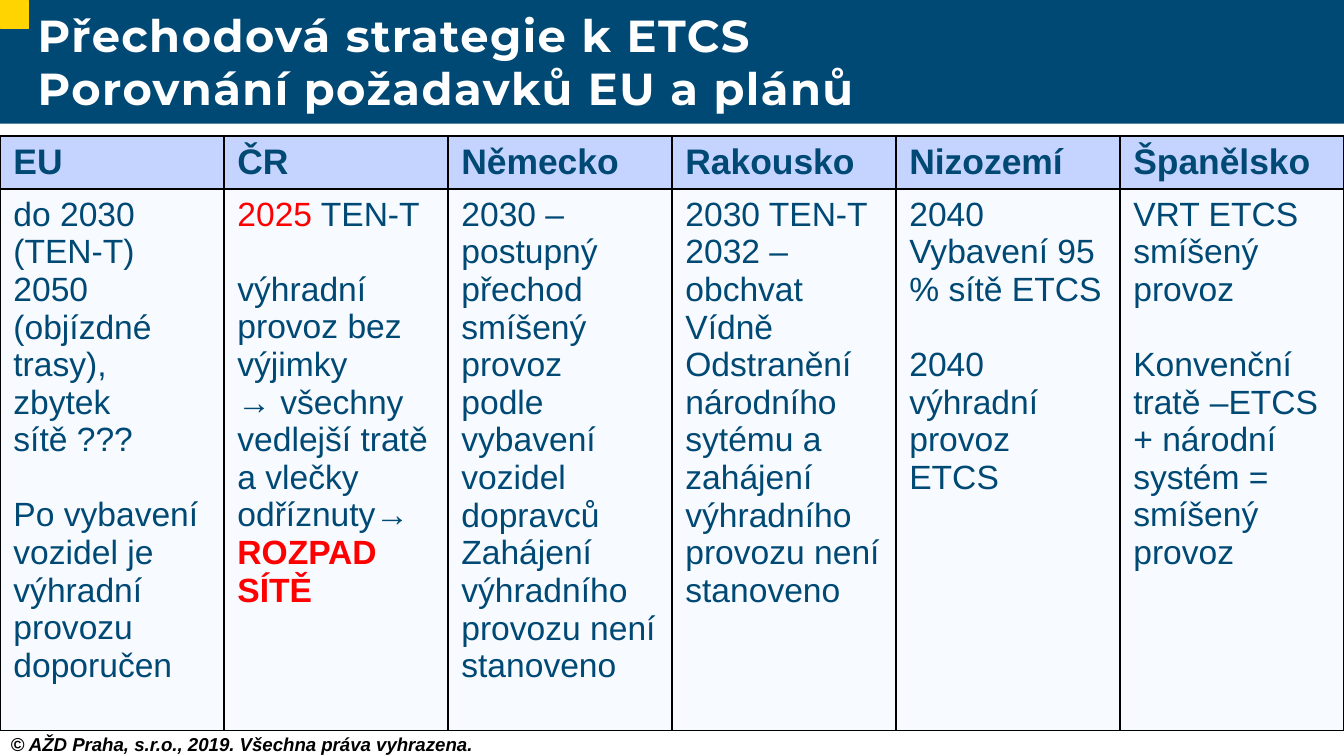
from lxml import etree
from pptx import Presentation
from pptx import util as u
from pptx.dml.color import RGBColor
from pptx.enum import shapes, text
from pptx.oxml.ns import qn

NAVY, YELLOW, RED, WHITE, BLACK = "004974", "FFD400", "FF0000", "FFFFFF", "000000"
HEADER_FILL, BODY_FILL = "C5D4FF", "DAE6FF"
WIDTH = 10
HEIGHT = WIDTH * 9 / 16
BODY_SIZE = 18
GAP = 20  # points, about one line of body text

# Content: a paragraph is (space before, runs); a run is (text, colour, bold)
TITLE = ["Přechodová strategie k ETCS", "Porovnání požadavků EU a plánů"]
COPYRIGHT = "© AŽD Praha, s.r.o., 2019. Všechna práva vyhrazena."


def plain(words, before=0):
    return before, [(words, NAVY, False)]


COUNTRIES = {
    "EU": [
        plain("do 2030 (TEN-T)"),
        plain("2050 (objízdné trasy), zbytek sítě ???"),
        plain("Po vybavení vozidel je výhradní provozu doporučen", GAP),
    ],
    "ČR": [
        (0, [("2025", RED, False), (" TEN-T", NAVY, False)]),
        plain("výhradní provoz bez výjimky\n→ všechny vedlejší tratě a vlečky odříznuty→", GAP),
        (0, [("ROZPAD SÍTĚ", RED, True)]),
    ],
    "Německo": [
        plain("2030 – postupný přechod smíšený provoz"),
        plain("podle vybavení vozidel dopravců"),
        plain("Zahájení výhradního provozu není stanoveno"),
    ],
    "Rakousko": [
        plain("2030 TEN-T"),
        plain("2032 – obchvat Vídně"),
        plain("Odstranění národního sytému a zahájení výhradního provozu není stanoveno"),
    ],
    "Nizozemí": [
        plain("2040"),
        plain("Vybavení 95 % sítě ETCS"),
        plain("2040 výhradní provoz ETCS", GAP),
    ],
    "Španělsko": [
        plain("VRT ETCS smíšený provoz"),
        plain("Konvenční tratě –ETCS + národní systém = smíšený provoz", GAP),
    ],
}


def color(value):
    return RGBColor.from_string(value)


def add_run(paragraph, words, size, hue, bold, face="Arial"):
    for i, line in enumerate(words.split("\n")):
        if i:
            paragraph.add_line_break()
        run = paragraph.add_run()
        run.text = line
        run.font.size, run.font.bold, run.font.name = u.Pt(size), bold, face
        run.font.color.rgb = color(hue)
    return run


def fill_frame(frame, paragraphs, size):
    for i, (before, runs) in enumerate(paragraphs):
        paragraph = frame.add_paragraph() if i else frame.paragraphs[0]
        paragraph.space_before = u.Pt(before)
        for words, hue, bold in runs:
            add_run(paragraph, words, size, hue, bold)


def set_margins(frame, *inches):
    (frame.margin_left, frame.margin_top,
     frame.margin_right, frame.margin_bottom) = map(u.Inches, inches)


def add_block(kind, width, height, hue):
    block = slide.shapes.add_shape(kind, 0, 0, u.Inches(width), u.Inches(height))
    block.shadow.inherit = False
    block.fill.solid()
    block.fill.fore_color.rgb = color(hue)
    block.line.fill.background()
    return block


def style_cell(cell, hue, opacity=None):
    props = cell._tc.get_or_add_tcPr()
    for side in ("a:lnL", "a:lnR", "a:lnT", "a:lnB"):
        border = etree.SubElement(props, qn(side), w=str(u.Pt(1)))
        solid = etree.SubElement(border, qn("a:solidFill"))
        etree.SubElement(solid, qn("a:srgbClr"), val=BLACK)
    cell.fill.solid()
    cell.fill.fore_color.rgb = color(hue)
    if opacity:
        tint = props.find(qn("a:solidFill")).find(qn("a:srgbClr"))
        etree.SubElement(tint, qn("a:alpha"), val=str(opacity * 1000))


deck = Presentation()
deck.slide_width, deck.slide_height = u.Inches(WIDTH), u.Inches(HEIGHT)
slide = deck.slides.add_slide(deck.slide_layouts[5])

# Title band with its corner mark
add_block(shapes.MSO_SHAPE.RECTANGLE, WIDTH, 0.92, NAVY)
corner = add_block(shapes.MSO_SHAPE.FLOWCHART_PROCESS, 0.21, 0.21, YELLOW)
corner.line.color.rgb = color(YELLOW)
corner.line.width = u.Pt(0.5)

# Title, brought in front of the band
title = slide.shapes.title
title.left, title.top, title.width, title.height = map(u.Inches, (0.28, 0.06, 8.5, 0.79))
slide.shapes._spTree.append(title._element)
frame = title.text_frame
frame.word_wrap = True
frame.auto_size = text.MSO_AUTO_SIZE.NONE
frame.vertical_anchor = text.MSO_ANCHOR.MIDDLE
set_margins(frame, 0, 0.04, 0.1, 0.04)
heading = frame.paragraphs[0]
heading.alignment = text.PP_ALIGN.LEFT
add_run(heading, "\n".join(TITLE), 24, WHITE, True, "Montserrat")
for run in heading.runs:
    run.font._element.set("spc", "80")

# Copyright line
footer = slide.shapes.add_textbox(0, u.Inches(5.41), u.Inches(7.67), u.Inches(0.21)).text_frame
footer.word_wrap = True
footer.vertical_anchor = text.MSO_ANCHOR.BOTTOM
set_margins(footer, 0.08, 0, 0.04, 0)
add_run(footer.paragraphs[0], COPYRIGHT, 10, BLACK, True).font.italic = True

# Comparison table: one equal column per country
ROWS = (0.37, 4.03)
table = slide.shapes.add_table(
    len(ROWS), len(COUNTRIES), 0, u.Inches(1.01), u.Inches(WIDTH), u.Inches(sum(ROWS))
).table
for row, height in zip(table.rows, ROWS):
    row.height = u.Inches(height)
for column, (country, plan) in enumerate(COUNTRIES.items()):
    head, body = table.cell(0, column), table.cell(1, column)
    head.margin_bottom = u.Inches(0.03)
    style_cell(head, HEADER_FILL)
    style_cell(body, BODY_FILL, opacity=20)
    fill_frame(head.text_frame, [(0, [(country, NAVY, True)])], 19)
    fill_frame(body.text_frame, plan, BODY_SIZE)

deck.save("out.pptx")
